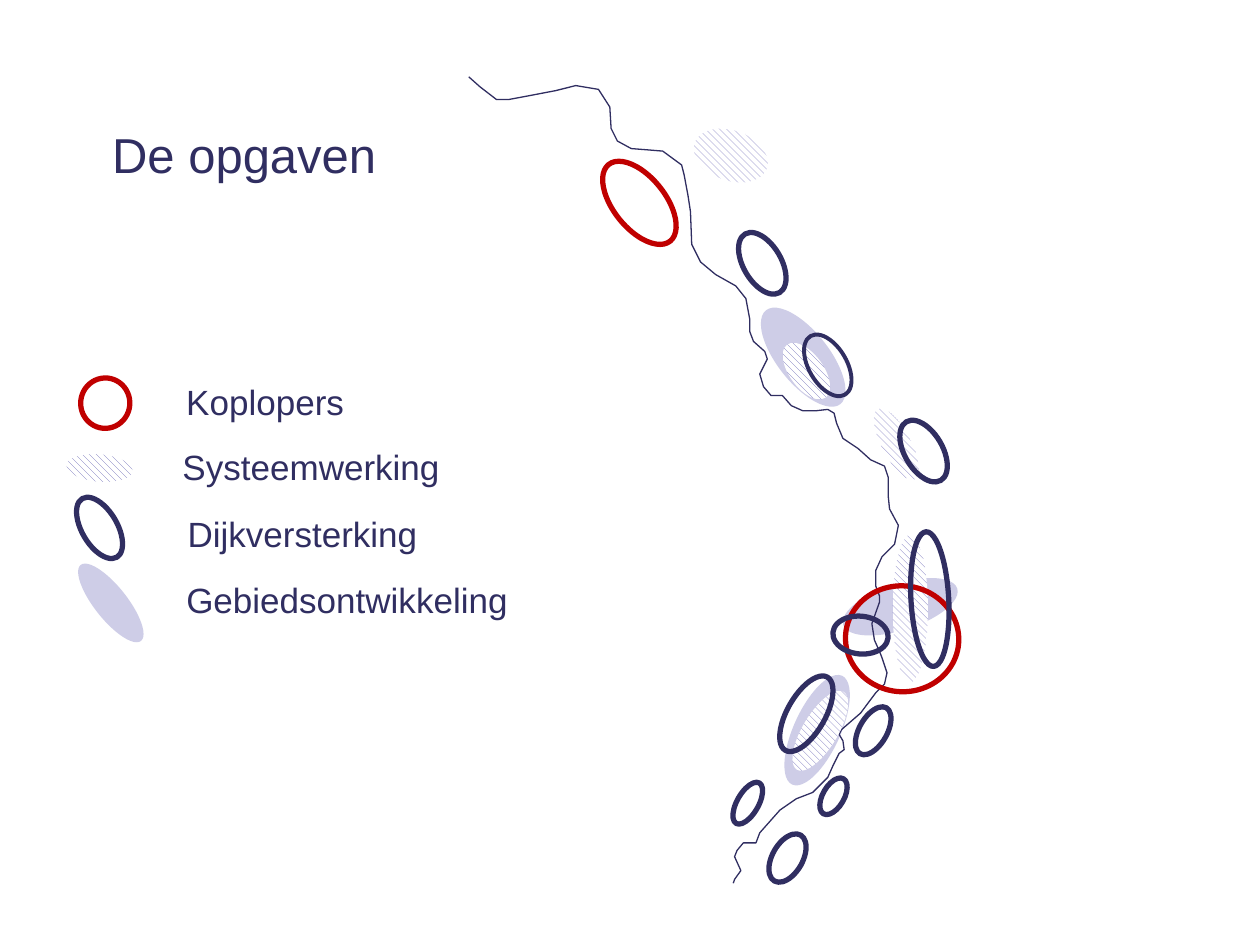
from pptx import Presentation
from pptx.dml.color import RGBColor
from pptx.enum.dml import MSO_PATTERN
from pptx.enum.shapes import MSO_SHAPE
from pptx.enum.text import MSO_ANCHOR, MSO_AUTO_SIZE, PP_ALIGN
from pptx.util import Pt

PX = 9144
OVAL = MSO_SHAPE.OVAL
HATCH = MSO_PATTERN.WIDE_DOWNWARD_DIAGONAL
LEFT, MIDDLE, TOP = PP_ALIGN.LEFT, MSO_ANCHOR.MIDDLE, MSO_ANCHOR.TOP
GROW = MSO_AUTO_SIZE.SHAPE_TO_FIT_TEXT
COLORS = {"navy": "302E61", "red": "C00000", "lilac": "CECDE7",
          "hatch": "6D6AB8", "white": "FFFFFF"}

RIVER = [
    (372, 61), (381, 69), (394, 79), (404, 79), (420, 76), (441, 72), (457, 68),
    (475, 71), (484, 85), (485, 102), (490, 112), (501, 118), (514, 119),
    (526, 120), (541, 131), (543, 139), (546, 155), (548, 168), (549, 194),
    (556, 208), (568, 218), (584, 227), (592, 237), (595, 253), (595, 263),
    (598, 271), (607, 279), (609, 285), (603, 297), (606, 307), (612, 314),
    (621, 314), (628, 322), (637, 326), (648, 326), (657, 325), (662, 328),
    (664, 336), (669, 348), (681, 356), (691, 365), (702, 370), (705, 379),
    (705, 394), (706, 404), (713, 417), (710, 432), (700, 442), (695, 453),
    (695, 465), (698, 473), (698, 478), (692, 495), (694, 508), (698, 517),
    (700, 522), (704, 534), (702, 543), (695, 550), (683, 566), (668, 579),
    (666, 583), (669, 588), (670, 595), (666, 598), (661, 608), (657, 617),
    (645, 629), (632, 634), (619, 643), (611, 652), (603, 661), (600, 669),
    (590, 669), (585, 675), (583, 680), (588, 691), (583, 698), (582, 701)]

AREAS = [(630, 532, 37, 95, 24.6), (696, 434, 37, 95, 252.3),
         (617, 236, 41, 95, 321.6)]
SYSTEMS = [(680, 341, 63, 23, 62.1), (664, 469, 117, 28, 270),
           (615, 566, 72, 28, 121), (614, 281, 52, 27, 53.9)]
DIKES = [(718, 331, 30, 54, 329.5), (723, 422, 30, 107, 356.8),
         (668, 482, 30, 44, 275.7), (613, 660, 24, 42, 29.8),
         (653, 616, 17, 32, 29.8), (682, 559, 22, 42, 29.8),
         (585, 619, 17, 37, 29.8), (625, 533, 30, 67, 29.8)]
LEGEND = [("Koplopers", 138, 297, 147), ("Systeemwerking", 135, 349, 226),
          ("Dijkversterking", 139, 402, 204), ("Gebiedsontwikkeling", 138, 454, 278)]


def rgb(name):
    """Return the named colour."""
    return RGBColor.from_string(COLORS[name])


def style(sp, fill=None, line=None, width=3):
    """Set the fill, outline and shadow of a shape."""
    sp.shadow.inherit = False
    if fill == "hatch":
        sp.fill.patterned()
        sp.fill.pattern = HATCH
        sp.fill.fore_color.rgb = rgb("hatch")
        sp.fill.back_color.rgb = rgb("white")
    elif fill:
        sp.fill.solid()
        sp.fill.fore_color.rgb = rgb(fill)
    else:
        sp.fill.background()
    if line:
        sp.line.color.rgb = rgb(line)
        sp.line.width = Pt(width)
    else:
        sp.line.fill.background()


def add_ellipse(s, box, **look):
    """Add a rotated ellipse from left, top, width, height and angle."""
    sp = s.shapes.add_shape(OVAL, *(v * PX for v in box[:4]))
    sp.rotation = box[4]
    style(sp, **look)


def add_river(s):
    """Draw the course of the river."""
    builder = s.shapes.build_freeform(*RIVER[0], scale=PX)
    builder.add_line_segments(RIVER[1:], close=False)
    style(builder.convert_to_shape(), line="navy", width=0.75)


def set_text(sp, text, size=20, wrap=False, anchor=TOP):
    """Write formatted text in a shape."""
    tf = sp.text_frame
    tf.word_wrap = wrap
    tf.auto_size = GROW
    tf.vertical_anchor = anchor
    p = tf.paragraphs[0]
    p.alignment = LEFT
    r = p.add_run()
    r.text = text
    r.font.size = Pt(size)
    r.font.name = "Arial"
    r.font.color.rgb = rgb("navy")


def add_title(s, text):
    """Place and fill the title placeholder."""
    sp = s.shapes.title
    sp.left, sp.top, sp.width, sp.height = (v * PX for v in (79, 94, 327, 57))
    set_text(sp, text, size=28, wrap=True, anchor=MIDDLE)


def add_map(s):
    """Draw the river with the tasks along it."""
    for box in AREAS:
        add_ellipse(s, box, fill="lilac")
    add_river(s)
    add_ellipse(s, (487, 122, 41, 78, 321.2), line="red")
    add_ellipse(s, (549, 103, 62, 41, 19.7), fill="hatch", line="white", width=0.75)
    for box in SYSTEMS:
        add_ellipse(s, box, fill="hatch")
    add_ellipse(s, (671, 465, 90, 84, 5.2), line="red")
    add_ellipse(s, (590, 182, 30, 54, 329.5), fill="white", line="navy")
    add_ellipse(s, (642, 263, 30, 54, 329.5), line="navy", width=2.25)
    for box in DIKES:
        add_ellipse(s, box, line="navy")


def add_legend(s):
    """Draw the legend symbols and their labels."""
    add_ellipse(s, (64, 300, 39, 40, 5.2), line="red")
    add_ellipse(s, (52, 360, 54, 23, 5.1), fill="hatch", line="white", width=0.75)
    add_ellipse(s, (75, 440, 26, 77, 321.6), fill="lilac")
    add_ellipse(s, (65, 392, 28, 54, 329.5), fill="white", line="navy")
    for text, x, y, width in LEGEND:
        set_text(s.shapes.add_textbox(x * PX, y * PX, width * PX, 44 * PX), text)


def main():
    """Build the slide and save it."""
    prs = Presentation()
    prs.slide_width, prs.slide_height = 1000 * PX, 750 * PX
    s = prs.slides.add_slide(prs.slide_layouts[5])
    add_title(s, "De opgaven")
    add_map(s)
    add_legend(s)
    prs.save("out.pptx")


if __name__ == "__main__":
    main()
